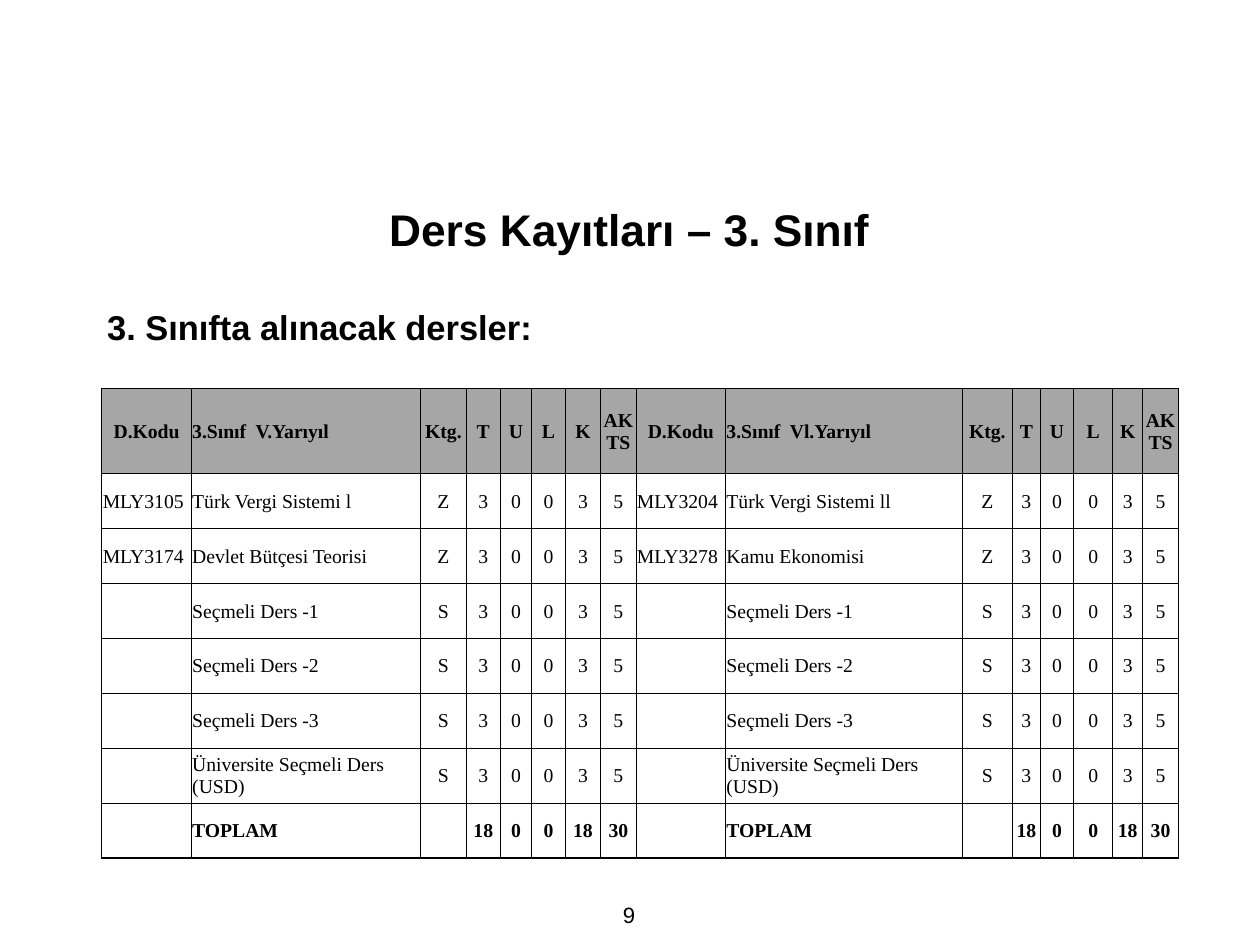
from dataclasses import dataclass

from lxml.etree import SubElement
from pptx import Presentation
from pptx.dml.color import RGBColor
from pptx.enum.text import MSO_ANCHOR as Anchor, PP_ALIGN as Align
from pptx.oxml.ns import qn
from pptx.util import Inches, Pt


@dataclass(frozen=True)
class Theme:
    ink: str = "000000"
    header_fill: str = "A6A6A6"
    heading_font: str = "Arial"
    table_font: str = "Times New Roman"
    title_size: int = 36
    subtitle_size: int = 28
    table_size: int = 16
    page_number_size: int = 18
    border_width: int = 1


THEME = Theme()
COLUMN_WIDTHS = [
    1.01, 2.59, 0.51, 0.39, 0.35, 0.38, 0.4, 0.4,
    1.01, 2.67, 0.57, 0.31, 0.38, 0.44, 0.34, 0.4,
]
HEADER_HEIGHT, COURSE_HEIGHT = 0.96, 0.62
SEMESTER_COLUMNS = 8
CODE_COLUMN, COURSE_COLUMN = 0, 1
COURSE_HOURS = ["3", "0", "0", "3", "5"]
TOTAL_HOURS = ["18", "0", "0", "18", "30"]
ELECTIVES = [
    "Seçmeli Ders -1",
    "Seçmeli Ders -2",
    "Seçmeli Ders -3",
    "Üniversite Seçmeli Ders (USD)",
]
FALL_COURSES = [("MLY3105", "Türk Vergi Sistemi l"), ("MLY3174", "Devlet Bütçesi Teorisi")]
SPRING_COURSES = [("MLY3204", "Türk Vergi Sistemi ll"), ("MLY3278", "Kamu Ekonomisi")]


def semester_rows(heading, required_courses):
    """Return the header, course and total rows of one semester."""
    return [
        ["D.Kodu", heading, "Ktg.", "T", "U", "L", "K", "AKTS"],
        *[[code, course, "Z", *COURSE_HOURS] for code, course in required_courses],
        *[["", course, "S", *COURSE_HOURS] for course in ELECTIVES],
        ["", "TOPLAM", "", *TOTAL_HOURS],
    ]


def style_paragraph(paragraph, font_name, size, bold, align):
    paragraph.alignment = align
    for run in paragraph.runs:
        run.font.name = font_name
        run.font.size = Pt(size)
        run.font.bold = bold
        run.font.color.rgb = RGBColor.from_string(THEME.ink)


def add_text(slide, text, box, size, bold=True, align=Align.LEFT,
             anchor=Anchor.MIDDLE, wrap=True):
    frame = slide.shapes.add_textbox(*map(Inches, box)).text_frame
    frame.word_wrap = wrap
    frame.vertical_anchor = anchor
    frame.margin_left = frame.margin_right = Inches(0.06)
    frame.margin_top = frame.margin_bottom = Inches(0.06)
    frame.text = text
    style_paragraph(frame.paragraphs[0], THEME.heading_font, size, bold, align)


def add_borders(cell):
    properties = cell._tc.get_or_add_tcPr()
    for side in ("lnL", "lnR", "lnT", "lnB"):
        line = SubElement(properties, qn(f"a:{side}"), w=str(Pt(THEME.border_width)))
        fill = SubElement(line, qn("a:solidFill"))
        SubElement(fill, qn("a:srgbClr"), val=THEME.ink)


def fill_cell(cell, text, is_header, bold, align):
    add_borders(cell)
    if is_header:
        cell.fill.solid()
        cell.fill.fore_color.rgb = RGBColor.from_string(THEME.header_fill)
    else:
        cell.fill.background()
    cell.vertical_anchor = Anchor.MIDDLE
    cell.margin_left = cell.margin_right = cell.margin_top = Inches(0.01)
    cell.margin_bottom = 0
    cell.text = text
    style_paragraph(cell.text_frame.paragraphs[0], THEME.table_font,
                    THEME.table_size, bold, align)


def add_course_table(slide, rows):
    row_heights = [HEADER_HEIGHT] + [COURSE_HEIGHT] * (len(rows) - 1)
    table = slide.shapes.add_table(
        len(rows), len(COLUMN_WIDTHS), Inches(1.15), Inches(4.39),
        Inches(sum(COLUMN_WIDTHS)), Inches(sum(row_heights)),
    ).table
    table.horz_banding = False
    table.first_row = False
    for column, width in zip(table.columns, COLUMN_WIDTHS):
        column.width = Inches(width)
    for row, height in zip(table.rows, row_heights):
        row.height = Inches(height)
    for r, texts in enumerate(rows):
        is_header = r == 0
        bold = is_header or r == len(rows) - 1
        for c, text in enumerate(texts):
            field = c % SEMESTER_COLUMNS
            is_left = field == COURSE_COLUMN or (field == CODE_COLUMN and not is_header)
            align = Align.LEFT if is_left else Align.CENTER
            fill_cell(table.cell(r, c), text, is_header, bold, align)


def main():
    deck = Presentation()
    deck.slide_width, deck.slide_height = Inches(14.22), Inches(10.67)
    slide = deck.slides.add_slide(deck.slide_layouts[6])

    add_text(slide, "Ders Kayıtları – 3. Sınıf", (1.54, 2.22, 11.12, 0.72),
             THEME.title_size, align=Align.CENTER)
    add_text(slide, "3. Sınıfta alınacak dersler:", (1.15, 3.4, 12.13, 0.58),
             THEME.subtitle_size)
    fall = semester_rows("3.Sınıf  V.Yarıyıl", FALL_COURSES)
    spring = semester_rows("3.Sınıf  Vl.Yarıyıl", SPRING_COURSES)
    add_course_table(slide, [left + right for left, right in zip(fall, spring)])
    add_text(slide, "9", (6.9, 10.12, 0.4, 0.42), THEME.page_number_size,
             bold=False, align=Align.CENTER, anchor=Anchor.TOP, wrap=False)

    deck.save("out.pptx")


if __name__ == "__main__":
    main()
